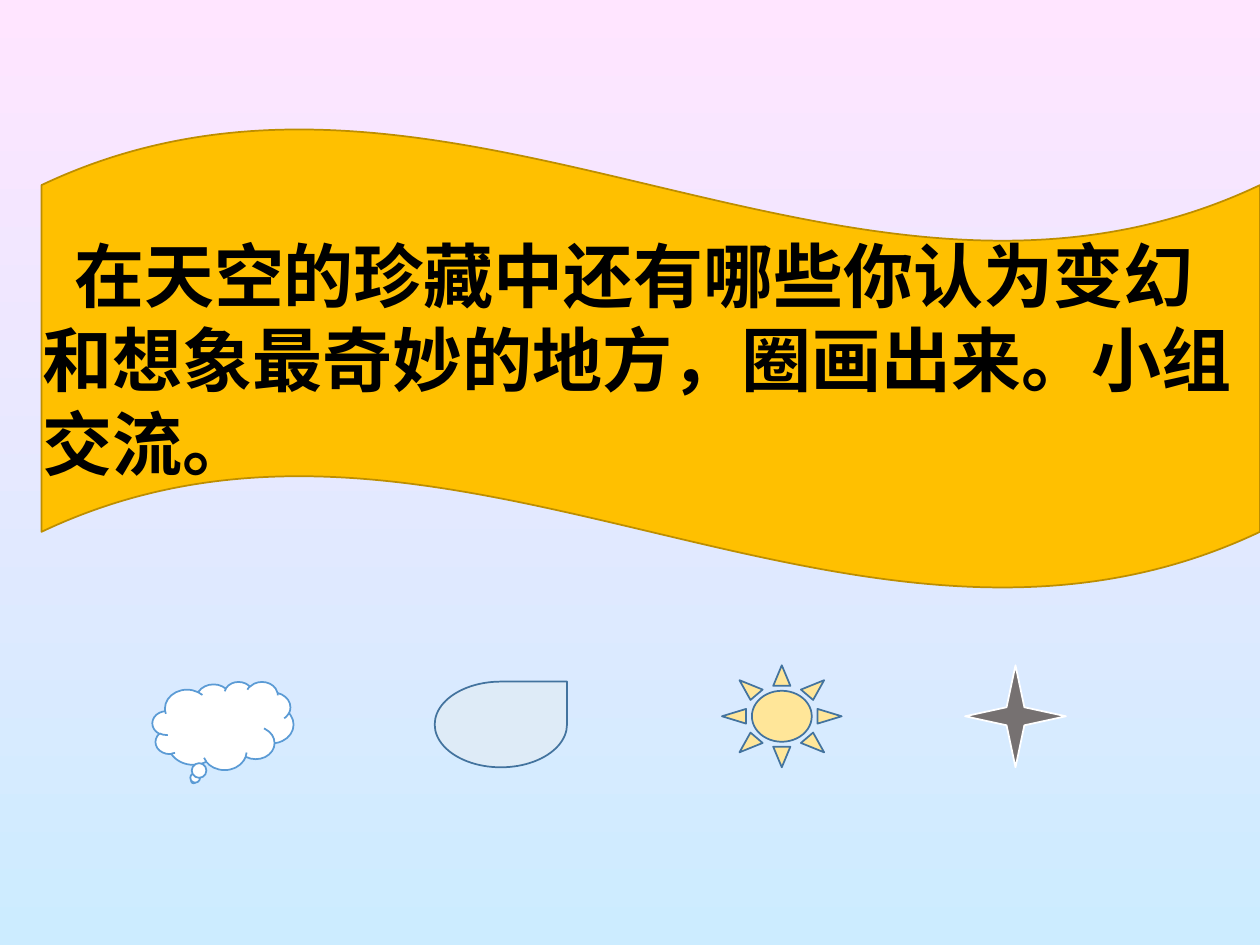
"""Build a sky-themed discussion slide with a wave banner and four sky symbols."""
from pptx import Presentation, util as u
from pptx.dml.color import RGBColor
from pptx.enum import shapes, text

QUESTION = "在天空的珍藏中还有哪些你认为变幻和想象最奇妙的地方，圈画出来。小组交流。"
QUESTION_BOX = (2.4, 24, 96.8, 28)
KIND = shapes.MSO_SHAPE
BANNER = (KIND.WAVE, (3.3, 13.47, 96.7, 48.93), "FFC000", "BD8E00")
SYMBOLS = [
    (KIND.CLOUD_CALLOUT, (12.1, 72.13, 11.2, 9.33), "FFFFFF", "5B9BD5"),
    (KIND.TEAR, (34.5, 72.13, 10.5, 9.07), "DEEBF7", "43739E"),
    (KIND.SUN, (57.3, 70.4, 9.5, 10.8), "FFE699", "43739E"),
    (KIND.STAR_4_POINT, (76.6, 70.4, 8, 10.8), "767171", "FFFFFF"),
]
THEME = {
    "sky": ("FFE5FF", "CCECFF"),
    "ink": "000000",
    "font": "Noto Sans CJK SC",
    "size": u.Pt(40),
    "leading": u.Pt(48),
    "indent": u.Inches(0.25),
    "line": u.Pt(1),
}


def rgb(code):
    """Return a colour from its hex code."""
    return RGBColor.from_string(code)


def place(prs, box):
    """Turn percentages of the slide into lengths."""
    sides = (prs.slide_width, prs.slide_height) * 2
    return [round(side * share / 100) for side, share in zip(sides, box)]


def paint_sky(s):
    """Fill the background from top to bottom."""
    fill = s.background.fill
    fill.gradient()
    fill.gradient_angle = 270
    for position, (stop, code) in enumerate(zip(fill.gradient_stops, THEME["sky"])):
        stop.position = position
        stop.color.rgb = rgb(code)


def add_symbol(prs, s, kind, box, fill, line):
    """Add one filled and outlined shape."""
    sp = s.shapes.add_shape(kind, *place(prs, box))
    sp.shadow.inherit = False
    sp.fill.solid()
    sp.fill.fore_color.rgb = rgb(fill)
    sp.line.color.rgb = rgb(line)
    sp.line.width = THEME["line"]


def add_question(prs, s):
    """Add the question with an indented first line."""
    tf = s.shapes.add_textbox(*place(prs, QUESTION_BOX)).text_frame
    tf.word_wrap = True
    tf.text = QUESTION
    p = tf.paragraphs[0]
    p.alignment = text.PP_ALIGN.LEFT
    p.line_spacing = THEME["leading"]
    pr = p._p.get_or_add_pPr()
    pr.set("marL", "0")
    pr.set("indent", str(THEME["indent"]))
    r = p.runs[0]
    r.font.name = THEME["font"]
    r.font.size = THEME["size"]
    r.font.bold = True
    r.font.color.rgb = rgb(THEME["ink"])
    ea = r._r.get_or_add_rPr().makeelement(
        "{http://schemas.openxmlformats.org/drawingml/2006/main}ea",
        {"typeface": THEME["font"]})
    r._r.rPr.append(ea)


def main():
    """Assemble and save the slide."""
    prs = Presentation()
    prs.slide_width, prs.slide_height = u.Inches(10), u.Inches(7.5)
    s = prs.slides.add_slide(prs.slide_layouts[6])
    paint_sky(s)
    add_symbol(prs, s, *BANNER)
    add_question(prs, s)
    for symbol in SYMBOLS:
        add_symbol(prs, s, *symbol)
    prs.save("out.pptx")


if __name__ == "__main__":
    main()
